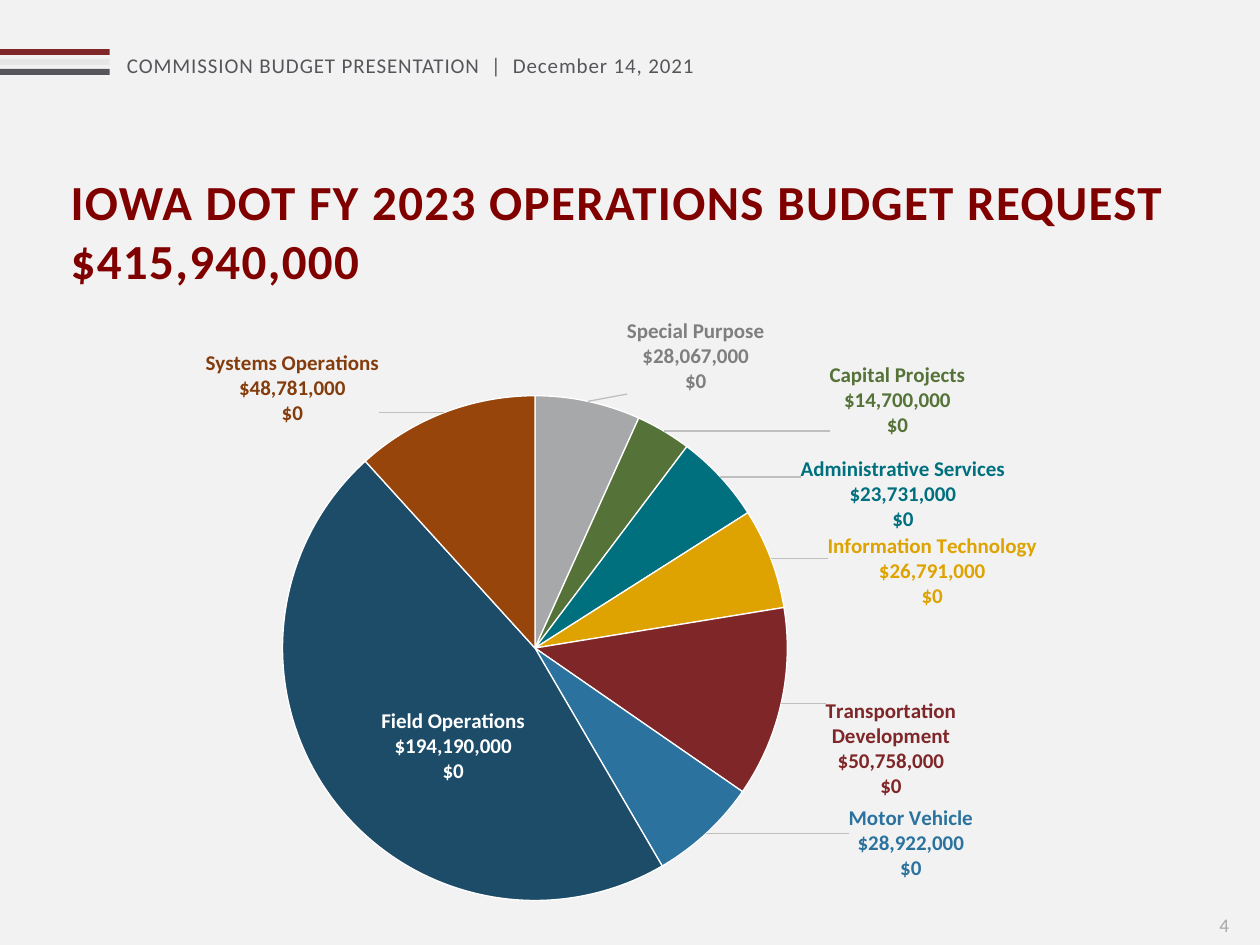
from dataclasses import dataclass

from lxml.etree import SubElement
from pptx import Presentation
from pptx.chart.data import CategoryChartData
from pptx.dml.color import RGBColor
from pptx.enum.chart import XL_CHART_TYPE as ChartType, XL_LABEL_POSITION as LabelPosition
from pptx.enum.shapes import MSO_SHAPE as Shape
from pptx.enum.text import MSO_ANCHOR as Anchor, PP_ALIGN as Align
from pptx.oxml import parse_xml
from pptx.oxml.ns import nsdecls, qn
from pptx.util import Cm, Pt


@dataclass(frozen=True)
class Theme:
    font: str = "Calibri"
    page: str = "F2F2F2"
    title: str = "800000"
    header: str = "55565A"
    number: str = "A7A8A9"
    leader: str = "BFBFBF"
    white: str = "FFFFFF"
    bars: tuple = ("7F2629", "E7E6E6", "54565A")
    title_size: int = 28
    text_size: int = 12
    number_size: int = 11


@dataclass(frozen=True)
class Slice:
    name: str
    amount: int
    fill: str
    label: str
    shift: tuple  # label offset as a share of the chart's width and height


THEME = Theme()
SLICES = [
    Slice("Special Purpose", 28067000, "A7A8A9", "7F7F7F", (0.03, 0)),
    Slice("Capital Projects", 14700000, "557238", "557238", (0.13, 0.02)),
    Slice("Administrative Services", 23731000, "00707F", "00707F", (0.06, 0.09)),
    Slice("Information Technology", 26791000, "DEA300", "DEA300", (0.04, 0.08)),
    Slice("Transportation Development", 50758000, "7F2629", "7F2629", (0.03, -0.01)),
    Slice("Motor Vehicle", 28922000, "2B739E", "2B739E", (0.11, -0.05)),
    Slice("Field Operations", 194190000, "1D4C69", THEME.white, (0.16, -0.14)),
    Slice("Systems Operations", 48781000, "98450C", "843C0C", (-0.05, 0.03)),
]
PIE_AREA = {"x": 0.26, "y": 0.15, "w": 0.41, "h": 0.76}
MONEY = '"$"#,##0'


def rgb(color: str) -> RGBColor:
    return RGBColor.from_string(color)


def style_font(font, *, size: float, color: str, bold: bool = False) -> None:
    font.name, font.size, font.bold = THEME.font, Pt(size), bold
    font.color.rgb = rgb(color)


def write(para, text: str, *, size: float, color: str, bold: bool = False,
          spacing: float = 0) -> None:
    """Write text into a paragraph; each newline becomes a line break."""
    para.alignment = Align.LEFT
    for index, line in enumerate(text.split("\n")):
        if index:
            para.add_line_break()
        span = para.add_run()
        span.text = line
        style_font(span.font, size=size, color=color, bold=bold)
        span.font._element.set("spc", str(round(spacing * 100)))


def add_text(page, text: str, left: float, top: float, width: float, height: float,
             **style) -> None:
    box = page.shapes.add_textbox(Cm(left), Cm(top), Cm(width), Cm(height))
    box.text_frame.word_wrap = True
    write(box.text_frame.paragraphs[0], text, **style)


def add_bar(page, top: float, color: str) -> None:
    bar = page.shapes.add_shape(Shape.RECTANGLE, Cm(0), Cm(top), Cm(2.21), Cm(0.12))
    bar.shadow.inherit = False
    bar.fill.solid()
    bar.fill.fore_color.rgb = rgb(color)
    bar.line.fill.background()


def manual_layout(inner: bool = False, **values: float):
    """Build a chart layout element from x, y, w and h shares."""
    target = '<c:layoutTarget val="inner"/>' if inner else ""
    modes = '<c:xMode val="edge"/><c:yMode val="edge"/>' if inner else ""
    places = "".join(f'<c:{key} val="{value}"/>' for key, value in values.items())
    return parse_xml(f'<c:layout {nsdecls("c")}><c:manualLayout>{target}{modes}{places}'
                     '</c:manualLayout></c:layout>')


def show_parts(labels) -> None:
    """Show category, value and percentage on separate lines."""
    for part in ("Val", "CatName", "Percent"):
        labels.find(qn(f"c:show{part}")).set("val", "1")
    separator = labels.makeelement(qn("c:separator"))
    separator.text = "\n"
    labels.find(qn("c:showBubbleSize")).addnext(separator)


def format_slice(series, index: int, item: Slice) -> None:
    point = series.points[index]
    point.format.fill.solid()
    point.format.fill.fore_color.rgb = rgb(item.fill)
    point.format.line.color.rgb = rgb(THEME.white)
    point.format.line.width = Pt(0.75)

    style_font(point.data_label.font, size=THEME.text_size, color=item.label, bold=True)
    point.data_label.position = LabelPosition.BEST_FIT
    label = series._element.xpath(f"c:dLbls/c:dLbl[c:idx/@val='{index}']")[0]
    layout = manual_layout(x=item.shift[0], y=item.shift[1])
    label.find(qn("c:idx")).addnext(layout)
    number = label.makeelement(qn("c:numFmt"), {"formatCode": MONEY, "sourceLinked": "0"})
    layout.addnext(number)
    show_parts(label)


def add_leader_lines(labels) -> None:
    for old in labels.findall(qn("c:showLeaderLines")):
        labels.remove(old)
    SubElement(labels, qn("c:showLeaderLines")).set("val", "1")
    labels.append(parse_xml(
        f'<c:leaderLines {nsdecls("c", "a")}><c:spPr><a:ln w="9525"><a:solidFill>'
        f'<a:srgbClr val="{THEME.leader}"/></a:solidFill></a:ln></c:spPr></c:leaderLines>'))


def add_budget_pie(page) -> None:
    data = CategoryChartData(number_format=MONEY)
    data.categories = [item.name for item in SLICES]
    data.add_series("Series 1", [item.amount for item in SLICES])
    chart = page.shapes.add_chart(ChartType.PIE, Cm(-0.91), Cm(5.97), Cm(25.15),
                                  Cm(13.39), data).chart
    chart.has_legend = chart.has_title = False
    style_font(chart.font, size=10, color=THEME.header)
    plot = chart.plots[0]
    plot.vary_by_categories = True
    series = plot.series[0]

    # Labels shared by the series, then each slice
    labels = series.data_labels
    style_font(labels.font, size=THEME.text_size, color=THEME.header, bold=True)
    labels.number_format, labels.number_format_is_linked = MONEY, False
    labels.position = LabelPosition.BEST_FIT
    for index, item in enumerate(SLICES):
        format_slice(series, index, item)
    show_parts(labels._element)
    add_leader_lines(labels._element)

    # Pie circle within the chart
    area = chart._chartSpace.xpath("c:chart/c:plotArea")[0]
    for old in area.findall(qn("c:layout")):
        area.remove(old)
    area.insert(0, manual_layout(inner=True, **PIE_AREA))


def main() -> None:
    deck = Presentation()
    deck.slide_width, deck.slide_height = Cm(25.4), Cm(19.05)
    page = deck.slides.add_slide(deck.slide_layouts[5])
    page.background.fill.solid()
    page.background.fill.fore_color.rgb = rgb(THEME.page)

    # Header strip
    add_text(page, "COMMISSION BUDGET PRESENTATION  |  December 14, 2021",
             2.31, 0.94, 12.29, 1.27, size=THEME.text_size, color=THEME.header, spacing=0.5)
    for index, color in enumerate(THEME.bars):
        add_bar(page, 0.99 + 0.2 * index, color)

    # Title
    title = page.shapes.title
    title.left, title.top, title.width, title.height = Cm(1.17), Cm(3.33), Cm(23.06), Cm(2.64)
    title.text_frame.word_wrap = True
    title.text_frame.vertical_anchor = Anchor.MIDDLE
    write(title.text_frame.paragraphs[0],
          "IOWA DOT FY 2023 OPERATIONS BUDGET REQUEST\n$415,940,000",
          size=THEME.title_size, color=THEME.title, bold=True, spacing=0.8)

    add_budget_pie(page)

    # Page number
    add_text(page, "4", 24.33, 18.29, 1.07, 1.02, size=THEME.number_size, color=THEME.number)
    deck.save("out.pptx")


if __name__ == "__main__":
    main()
